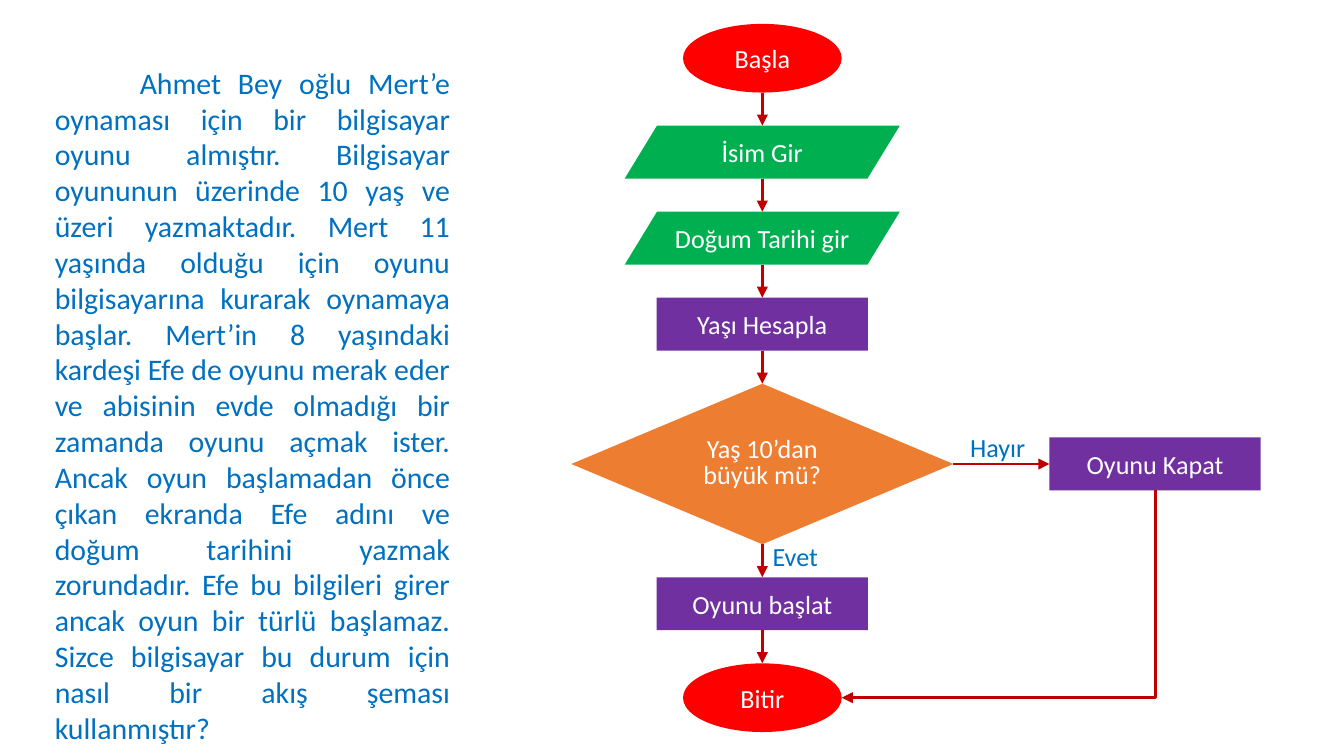
"""Build a slide that pairs a story with the flowchart that solves it."""
from dataclasses import dataclass

import lxml.etree
import pptx
import pptx.dml.color
import pptx.enum.shapes
import pptx.enum.text
import pptx.oxml.ns
import pptx.util

Pt = pptx.util.Pt
RGBColor = pptx.dml.color.RGBColor
Shape = pptx.enum.shapes.MSO_SHAPE
Connector = pptx.enum.shapes.MSO_CONNECTOR
Align = pptx.enum.text.PP_ALIGN
qn = pptx.oxml.ns.qn

RED = RGBColor(0xFF, 0x00, 0x00)
GREEN = RGBColor(0x00, 0xB0, 0x50)
PURPLE = RGBColor(0x70, 0x30, 0xA0)
ORANGE = RGBColor(0xED, 0x7D, 0x31)
BLUE = RGBColor(0x00, 0x70, 0xC0)
DARK_RED = RGBColor(0xC0, 0x00, 0x00)
WHITE = RGBColor(0xFF, 0xFF, 0xFF)

FONT = "Calibri"
COLUMN_X = 408.4
SIDE_X = 618.8
FIRST_TOP = 12.8
GAP = 17.7

STORY = (
    "Ahmet Bey oğlu Mert’e oynaması için bir bilgisayar oyunu almıştır. "
    "Bilgisayar oyununun üzerinde 10 yaş ve üzeri yazmaktadır. Mert 11 yaşında "
    "olduğu için oyunu bilgisayarına kurarak oynamaya başlar. Mert’in 8 yaşındaki "
    "kardeşi Efe de oyunu merak eder ve abisinin evde olmadığı bir zamanda oyunu "
    "açmak ister. Ancak oyun başlamadan önce çıkan ekranda Efe adını ve doğum "
    "tarihini yazmak zorundadır. Efe bu bilgileri girer ancak oyun bir türlü "
    "başlamaz. Sizce bilgisayar bu durum için nasıl bir akış şeması kullanmıştır?"
)


@dataclass(frozen=True)
class Kind:
    preset: Shape
    width: float
    height: float
    fill: RGBColor


@dataclass(frozen=True)
class Step:
    kind: Kind
    lines: tuple[str, ...]


@dataclass(frozen=True)
class Label:
    text: str
    left: float
    top: float


TERMINAL = Kind(Shape.OVAL, 85, 36.8, RED)
ENTRY = Kind(Shape.PARALLELOGRAM, 147.4, 28.4, GREEN)
PROCESS = Kind(Shape.RECTANGLE, 113.2, 28.4, PURPLE)
DECISION = Kind(Shape.DIAMOND, 204.6, 86, ORANGE)

COLUMN = (
    Step(TERMINAL, ("Başla",)),
    Step(ENTRY, ("İsim Gir",)),
    Step(ENTRY, ("Doğum Tarihi gir",)),
    Step(PROCESS, ("Yaşı Hesapla",)),
    Step(DECISION, ("Yaş 10’dan", "büyük mü?")),
    Step(PROCESS, ("Oyunu başlat",)),
    Step(TERMINAL, ("Bitir",)),
)
CLOSE_GAME = Step(PROCESS, ("Oyunu Kapat",))
LABELS = (Label("Hayır", 512.6, 227.5), Label("Evet", 406.8, 285.8))


def style_font(para, size: float, color: RGBColor) -> None:
    para.font.name = FONT
    para.font.size = Pt(size)
    para.font.color.rgb = color


def add_step(page, step: Step, center_x: float, center_y: float) -> None:
    kind = step.kind
    box = page.shapes.add_shape(
        kind.preset, Pt(center_x - kind.width / 2), Pt(center_y - kind.height / 2),
        Pt(kind.width), Pt(kind.height))
    if kind is ENTRY:
        box.adjustments[0] = 0.61
    box.shadow.inherit = False
    box.fill.solid()
    box.fill.fore_color.rgb = kind.fill
    box.line.fill.background()
    frame = box.text_frame
    frame.word_wrap = False
    frame.vertical_anchor = pptx.enum.text.MSO_ANCHOR.MIDDLE
    para = frame.paragraphs[0]
    para.alignment = Align.CENTER
    if kind is DECISION:
        para.line_spacing = Pt(14)
    for index, line in enumerate(step.lines):
        if index:
            para.add_line_break()
        para.add_run().text = line
    style_font(para, 14, WHITE)


def add_text(page, text: str, left: float, top: float, width: float, height: float,
             size: float):
    box = page.shapes.add_textbox(Pt(left), Pt(top), Pt(width), Pt(height))
    box.text_frame.word_wrap = True
    para = box.text_frame.paragraphs[0]
    para.text = text
    style_font(para, size, BLUE)
    return para


def add_arrow(page, start: tuple[float, float], end: tuple[float, float],
              kind: Connector = Connector.STRAIGHT):
    arrow = page.shapes.add_connector(kind, *map(Pt, start + end))
    arrow.line.color.rgb = DARK_RED
    arrow.line.width = Pt(1.5)
    lxml.etree.SubElement(arrow.line._get_or_add_ln(), qn("a:tailEnd"), type="triangle")
    lxml.etree.SubElement(arrow._element.spPr, qn("a:effectLst"))
    return arrow


def add_down_left_arrow(page, start: tuple[float, float],
                        end: tuple[float, float]) -> None:
    center_x, center_y = (start[0] + end[0]) / 2, (start[1] + end[1]) / 2
    half_width, half_height = (end[1] - start[1]) / 2, (start[0] - end[0]) / 2
    arrow = add_arrow(page, (center_x - half_width, center_y - half_height),
                      (center_x + half_width, center_y + half_height), Connector.ELBOW)
    properties = arrow._element.spPr
    properties.find(qn("a:xfrm")).set("rot", str(90 * 60000))
    properties.find(qn("a:prstGeom")).set("prst", "bentConnector2")


def add_flowchart(page) -> None:
    top = FIRST_TOP
    centers = {}
    for index, step in enumerate(COLUMN):
        if index:
            add_arrow(page, (COLUMN_X, top - GAP), (COLUMN_X, top))
        centers[step.lines] = center_y = top + step.kind.height / 2
        add_step(page, step, COLUMN_X, center_y)
        top += step.kind.height + GAP
    branch_y = centers[COLUMN[4].lines]
    finish_y = centers[COLUMN[-1].lines]
    add_step(page, CLOSE_GAME, SIDE_X, branch_y)
    add_arrow(page, (COLUMN_X + DECISION.width / 2, branch_y),
              (SIDE_X - PROCESS.width / 2, branch_y))
    add_down_left_arrow(page, (SIDE_X, branch_y + PROCESS.height / 2),
                        (COLUMN_X + TERMINAL.width / 2, finish_y))
    for label in LABELS:
        add_text(page, label.text, label.left, label.top, 52, 26, 14)


def main() -> None:
    deck = pptx.Presentation()
    deck.slide_width, deck.slide_height = Pt(720), Pt(405)
    page = deck.slides.add_slide(deck.slide_layouts[6])
    story = add_text(page, STORY, 22.3, 31, 226, 353, 16)
    story.alignment = Align.JUSTIFY
    story._p.get_or_add_pPr().set("indent", str(Pt(45.5)))
    add_flowchart(page)
    deck.save("out.pptx")


if __name__ == "__main__":
    main()
